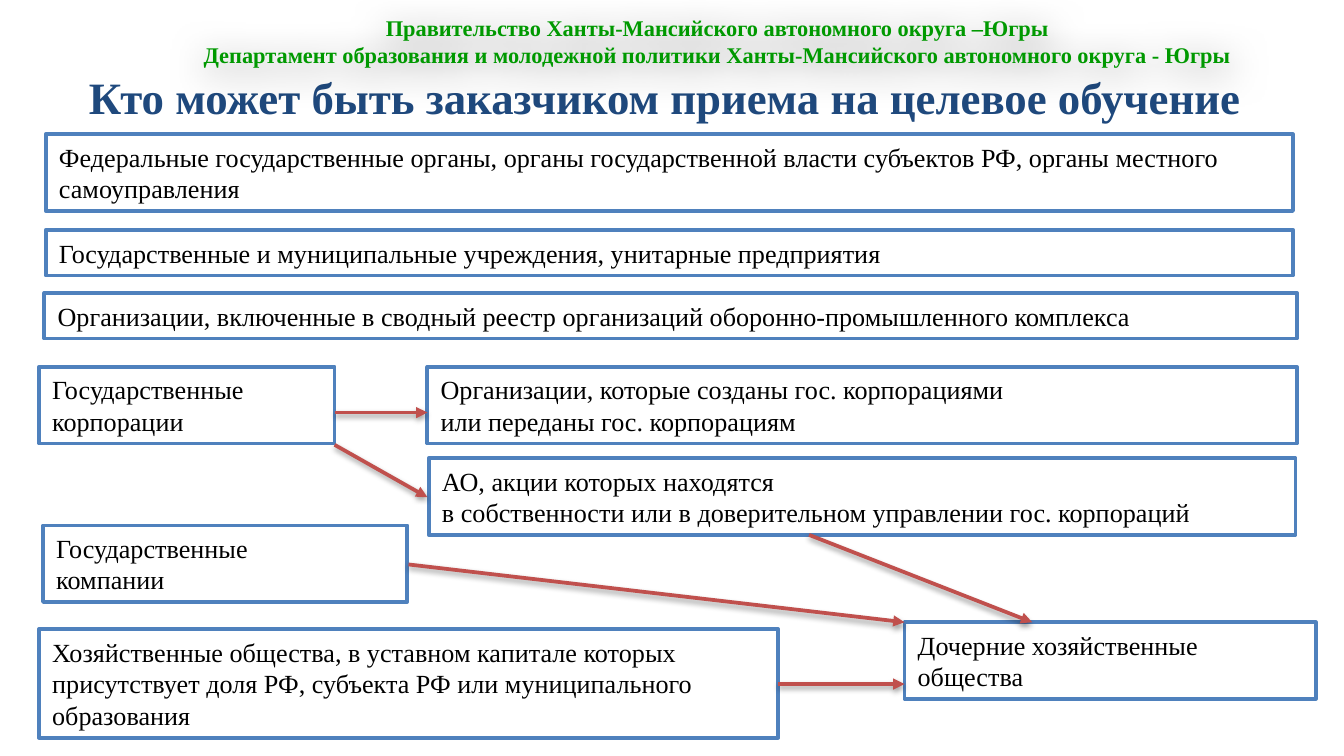
from lxml import etree
from pptx import Presentation
from pptx.dml.color import RGBColor
from pptx.enum.shapes import MSO_CONNECTOR, MSO_SHAPE
from pptx.enum.text import MSO_ANCHOR, MSO_AUTO_SIZE, PP_ALIGN
from pptx.oxml import parse_xml
from pptx.oxml.ns import qn
from pptx.util import Inches, Pt

FONT = "Times New Roman"
DRAWING_NS = "http://schemas.openxmlformats.org/drawingml/2006/main"
GREEN, NAVY, BLUE, RED = "009900", "1F497D", "4F81BD", "C0504D"
BLACK, WHITE = "000000", "FFFFFF"


def color(value):
    return RGBColor.from_string(value)


def write(frame, lines, size, ink, bold=False, align=PP_ALIGN.LEFT):
    frame.word_wrap = True
    frame.auto_size = MSO_AUTO_SIZE.NONE
    for index, line in enumerate(lines):
        para = frame.add_paragraph() if index else frame.paragraphs[0]
        para.alignment = align
        span = para.add_run()
        span.text = line
        span.font.name = FONT
        span.font.size = Pt(size)
        span.font.bold = bold
        span.font.color.rgb = color(ink)


def add_shadow(shape, blur, distance, opacity):
    """Cast a black shadow downwards; blur and distance in points, opacity in percent."""
    shape._element.spPr.append(parse_xml(
        f'<a:effectLst xmlns:a="{DRAWING_NS}">'
        f'<a:outerShdw blurRad="{Pt(blur)}" dist="{Pt(distance)}" dir="5400000" rotWithShape="0">'
        f'<a:srgbClr val="{BLACK}"><a:alpha val="{opacity * 1000}"/></a:srgbClr>'
        "</a:outerShdw></a:effectLst>"))


def add_card(page, left, top, width, height, *lines):
    card = page.shapes.add_shape(
        MSO_SHAPE.RECTANGLE, Inches(left), Inches(top), Inches(width), Inches(height))
    card.shadow.inherit = False
    card.fill.solid()
    card.fill.fore_color.rgb = color(WHITE)
    card.line.color.rgb = color(BLUE)
    card.line.width = Pt(2)
    card.text_frame.vertical_anchor = MSO_ANCHOR.MIDDLE
    write(card.text_frame, lines, 14, BLACK)


def add_arrow(page, start_x, start_y, end_x, end_y):
    arrow = page.shapes.add_connector(
        MSO_CONNECTOR.STRAIGHT,
        Inches(start_x), Inches(start_y), Inches(end_x), Inches(end_y))
    arrow.line.color.rgb = color(RED)
    arrow.line.width = Pt(2)
    etree.SubElement(arrow.line._get_or_add_ln(), qn("a:tailEnd"), type="triangle")
    add_shadow(arrow, 3.1, 1.6, 38)


def add_header(page, left, top, width, height):
    header = page.shapes.add_textbox(
        Inches(left), Inches(top), Inches(width), Inches(height))
    write(header.text_frame, [
        "Правительство Ханты-Мансийского автономного округа –Югры",
        "Департамент образования и молодежной политики "
        "Ханты-Мансийского автономного округа - Югры",
    ], 12, GREEN, True, PP_ALIGN.CENTER)
    add_shadow(header, 20, 3, 50)


def add_title(page, left, top, width, height):
    title = page.shapes.title
    title.left, title.top = Inches(left), Inches(top)
    title.width, title.height = Inches(width), Inches(height)
    title.text_frame.vertical_anchor = MSO_ANCHOR.TOP
    write(title.text_frame, ["Кто может быть заказчиком приема на целевое обучение"],
          24, NAVY, True, PP_ALIGN.CENTER)


def add_customers(page, left, top, width):
    """Stack the customers that stand on their own."""
    add_card(page, left, top, width, 0.57,
             "Федеральные государственные органы, органы государственной власти "
             "субъектов РФ, органы местного самоуправления")
    add_card(page, left, top + 0.71, width, 0.34,
             "Государственные и муниципальные учреждения, унитарные предприятия")
    add_card(page, left - 0.01, top + 1.18, width + 0.04, 0.34,
             "Организации, включенные в сводный реестр организаций "
             "оборонно-промышленного комплекса")


def add_scheme(page, left, top):
    """Draw the customers linked to the bodies they own."""
    cards = [
        (0, 0, 2.2, 0.57, "Государственные корпорации"),
        (2.9, 0.68, 6.45, 0.57, "АО, акции которых находятся",
         "в собственности или в доверительном управлении гос. корпораций"),
        (2.89, 0, 6.47, 0.57, "Организации, которые созданы гос. корпорациями",
         "или переданы гос. корпорациям"),
        (0.03, 1.18, 2.71, 0.57, "Государственные", "компании"),
        (0, 1.95, 5.5, 0.81,
         "Хозяйственные общества, в уставном капитале которых присутствует "
         "доля РФ, субъекта РФ или муниципального образования"),
        (6.44, 1.9, 3.06, 0.57, "Дочерние хозяйственные общества"),
    ]
    arrows = [
        (2.2, 0.34, 2.89, 0.34),
        (2.2, 0.58, 2.89, 0.97),
        (5.73, 1.25, 7.39, 1.9),
        (5.5, 2.36, 6.44, 2.36),
        (2.75, 1.47, 6.44, 1.9),
    ]
    for x, y, width, height, *lines in cards:
        add_card(page, left + x, top + y, width, height, *lines)
    for start_x, start_y, end_x, end_y in arrows:
        add_arrow(page, left + start_x, top + start_y, left + end_x, top + end_y)


def main():
    deck = Presentation()
    deck.slide_width = Inches(10)
    deck.slide_height = deck.slide_width * 9 // 16
    page = deck.slides.add_slide(deck.slide_layouts.get_by_name("Title Only"))
    add_header(page, 1.11, 0.06, 8.46, 0.5)
    add_title(page, 0.3, 0.47, 9.29, 0.47)
    add_customers(page, 0.34, 1, 9.28)
    add_scheme(page, 0.29, 2.73)
    deck.save("out.pptx")


if __name__ == "__main__":
    main()
